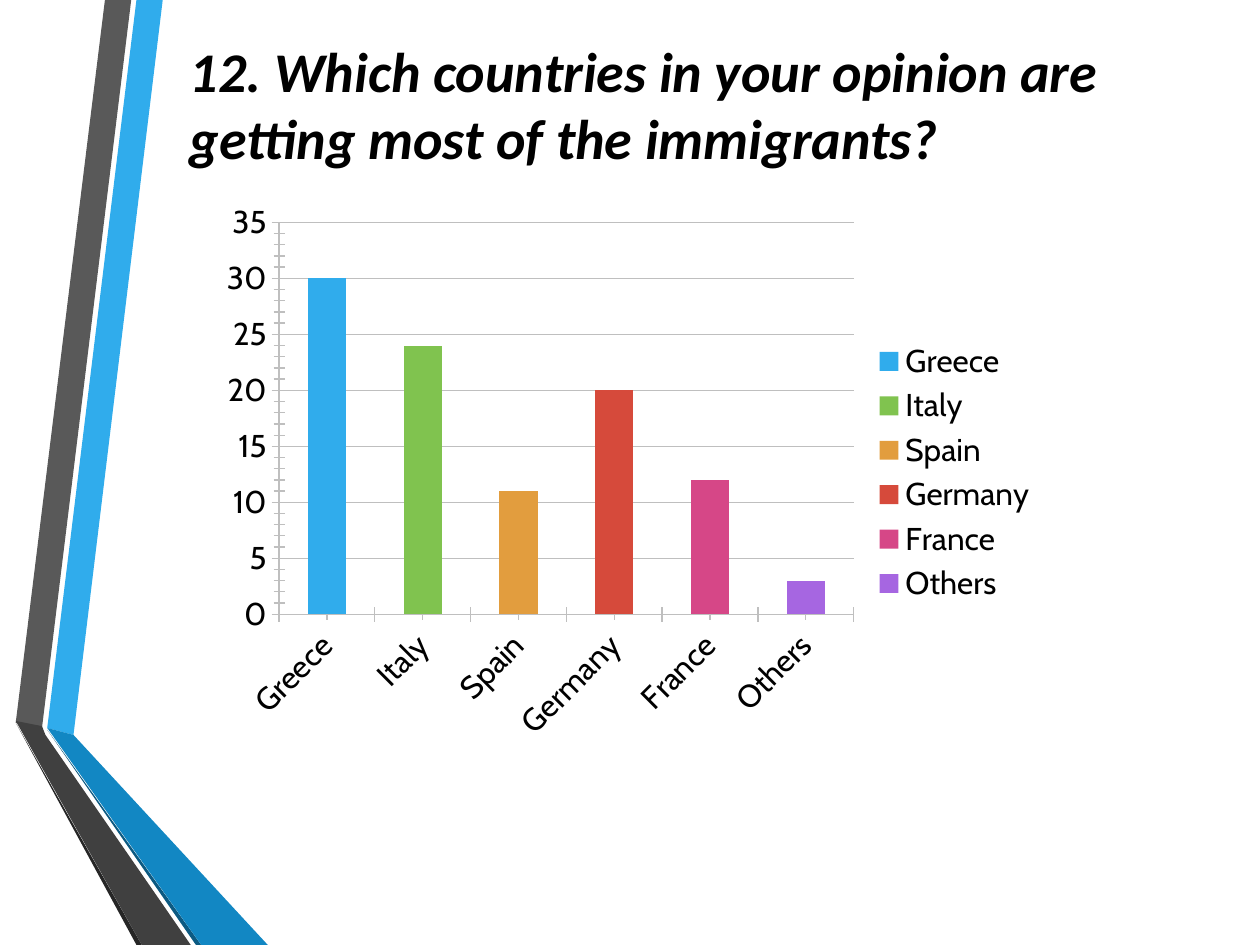
from pptx import Presentation
from pptx.chart.data import CategoryChartData as ChartData
from pptx.dml.color import RGBColor
from pptx.enum.chart import XL_CHART_TYPE as ChartType
from pptx.enum.chart import XL_LEGEND_POSITION as LegendPos
from pptx.enum.chart import XL_TICK_MARK as Tick
from pptx.enum.text import MSO_ANCHOR as Anchor
from pptx.enum.text import PP_ALIGN as Align
from pptx.oxml import parse_xml
from pptx.oxml.ns import nsdecls, qn
from pptx.util import Pt

COLORS = {
    "text": "000000", "grid": "BFBFBF",
    "blue": "30ACEC", "blue_mid": "1287C3", "blue_dark": "0C5A82",
    "gray": "595959", "gray_mid": "404040", "gray_dark": "262626",
}
# Country: (votes, bar colour)
COUNTRIES = {
    "Greece": (30, "30ACEC"), "Italy": (24, "80C34F"), "Spain": (11, "E29D3E"),
    "Germany": (20, "D64A3B"), "France": (12, "D64787"), "Others": (3, "A666E1"),
}
# Ribbon facets: (colour, outline in points)
RIBBONS = [
    ("blue", [(27.2, 416.2), (41.6, 419.8), (93.2, 0), (78.5, 0)]),
    ("gray", [(74.9, 0), (59.8, 0), (8.6, 412.8), (23.6, 415.6)]),
    ("gray_dark", [(8.6, 412.6), (78.5, 540), (81.4, 540)]),
    ("blue_dark", [(27.2, 416.6), (112.3, 540), (115.2, 540)]),
    ("blue_mid", [(27.2, 416.2), (115.2, 540), (152.6, 540), (41.6, 419.6)]),
    ("gray_mid", [(108.7, 540), (25.9, 419.8), (23.6, 415.4), (8.6, 412.4),
                  (81.4, 540)]),
]


def rgb(key):
    return RGBColor.from_string(COLORS.get(key, key))


def apply(target, values):
    for name, value in values.items():
        setattr(target, name, value)


class SlideBuilder:
    title_font = {"name": "Calibri", "size": Pt(32), "bold": True, "italic": True}
    chart_font = {"name": "Cabin", "size": Pt(18)}

    def __init__(self, slide):
        self.slide = slide

    def title(self, text, box):
        title = self.slide.shapes.title
        apply(title, dict(zip(("left", "top", "width", "height"), map(Pt, box))))
        frame = title.text_frame
        apply(frame, {"text": text, "word_wrap": True,
                      "vertical_anchor": Anchor.MIDDLE})
        paragraph = frame.paragraphs[0]
        paragraph.alignment = Align.LEFT
        font = paragraph.runs[0].font
        apply(font, self.title_font)
        font.color.rgb = rgb("text")

    def polygon(self, color, points):
        builder = self.slide.shapes.build_freeform(*points[0], scale=Pt(1))
        builder.add_line_segments(points[1:], close=True)
        facet = builder.convert_to_shape()
        facet.shadow.inherit = False
        facet.fill.solid()
        facet.fill.fore_color.rgb = rgb(color)
        facet.line.fill.background()

    def column_chart(self, data, box, plot_box):
        votes = ChartData()
        votes.categories = list(data)
        votes.add_series("Series 1", [value for value, _ in data.values()])
        chart = self.slide.shapes.add_chart(
            ChartType.COLUMN_CLUSTERED, *map(Pt, box), votes).chart
        apply(chart, {"has_title": False, "has_legend": True})
        apply(chart.font, self.chart_font)
        chart.font.color.rgb = rgb("text")
        chart.legend.position = LegendPos.RIGHT
        chart.legend.include_in_layout = True

        # Columns
        plot = chart.plots[0]
        apply(plot, {"gap_width": 150, "vary_by_categories": True})
        for index, (_, color) in enumerate(data.values()):
            fill = plot.series[0].points[index].format.fill
            fill.solid()
            fill.fore_color.rgb = rgb(color)

        # Axes
        country_axis, vote_axis = chart.category_axis, chart.value_axis
        for axis in (country_axis, vote_axis):
            apply(axis, {"major_tick_mark": Tick.CROSS, "minor_tick_mark": Tick.CROSS})
            self.thin_line(axis.format.line)
            # Shown by default, so no delete flag is kept
            axis._element.remove(axis._element.find(qn("c:delete")))
        apply(vote_axis, {"minimum_scale": 0, "maximum_scale": 35, "major_unit": 5,
                          "minor_unit": 1, "has_major_gridlines": True})
        self.thin_line(vote_axis.major_gridlines.format.line)
        apply(country_axis.tick_labels.font, self.chart_font)
        country_axis.tick_labels.font.color.rgb = rgb("text")
        body = country_axis._element.find(qn("c:txPr")).find(qn("a:bodyPr"))
        body.set("rot", "-2700000")
        body.set("vert", "horz")
        self.place_plot(chart, box, plot_box)

    def thin_line(self, line):
        line.width = Pt(0.75)
        line.color.rgb = rgb("grid")

    def place_plot(self, chart, box, plot_box):
        area = chart._chartSpace.chart.plotArea
        for old in area.findall(qn("c:layout")):
            area.remove(old)
        modes = '<c:xMode val="edge"/><c:yMode val="edge"/>'
        sizes = "".join(f'<c:{name} val="{part / whole}"/>'
                        for name, part, whole in zip("xywh", plot_box, box[2:] * 2))
        area.insert(0, parse_xml(
            f'<c:layout {nsdecls("c")}><c:manualLayout><c:layoutTarget val="inner"/>'
            f"{modes}{sizes}</c:manualLayout></c:layout>"))


def main():
    deck = Presentation()
    apply(deck, {"slide_width": Pt(720), "slide_height": Pt(540)})
    builder = SlideBuilder(deck.slides.add_slide(deck.slide_layouts[5]))

    # Folded ribbons on the left
    for color, points in RIBBONS:
        builder.polygon(color, points)

    # Question and answers
    builder.title(
        "12. Which countries in your opinion are getting most of the immigrants?",
        (101.2, 16.6, 596, 85))
    builder.column_chart(COUNTRIES, (120, 110, 480, 320), (39.5, 17.1, 328.4, 224))
    deck.save("out.pptx")


if __name__ == "__main__":
    main()
